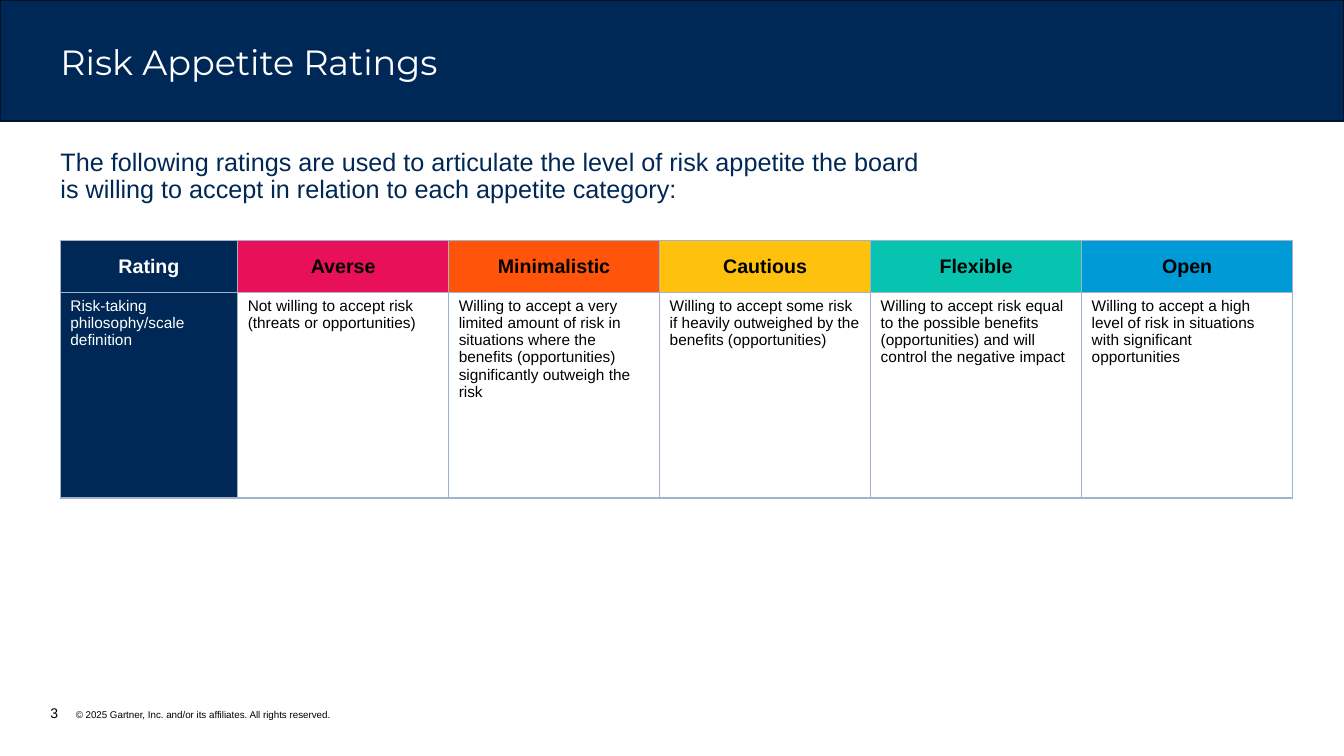
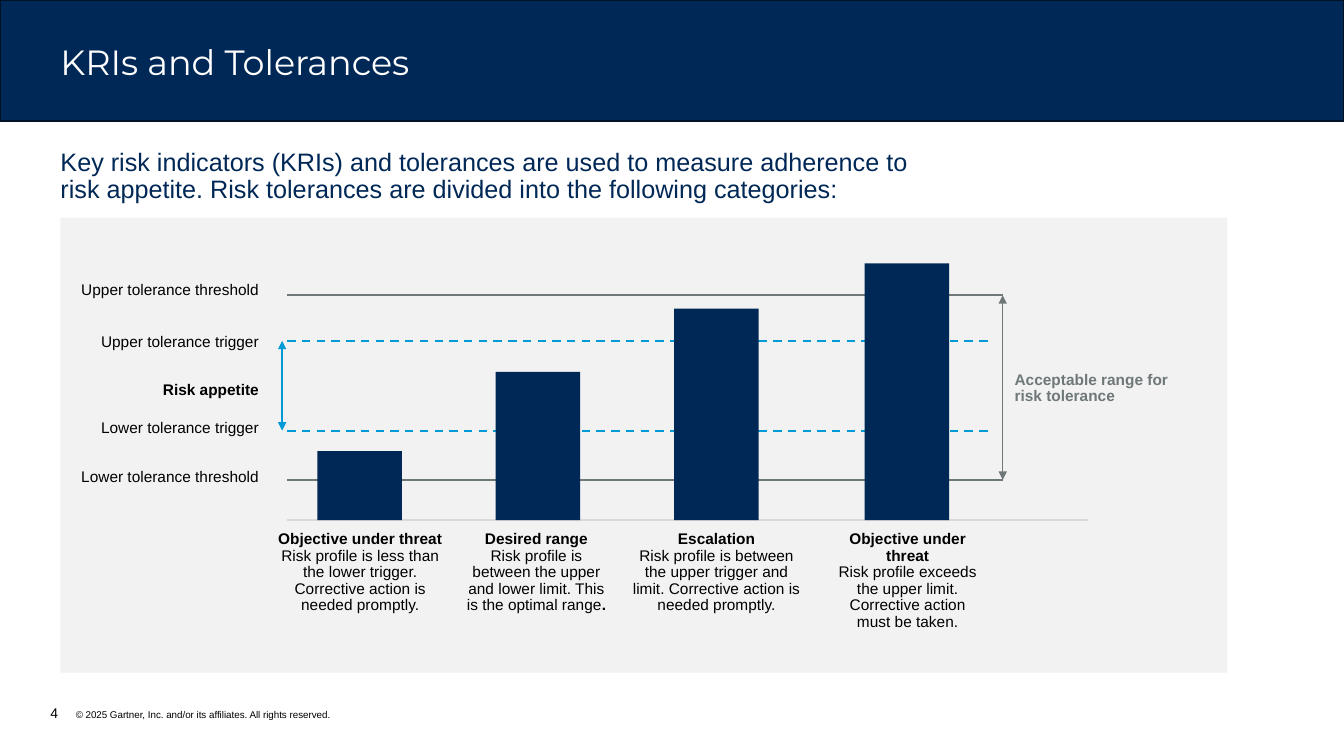
from dataclasses import dataclass

from pptx import Presentation
from pptx.dml.color import RGBColor
from pptx.enum.dml import MSO_LINE
from pptx.enum.shapes import MSO_CONNECTOR, MSO_SHAPE
from pptx.enum.text import MSO_ANCHOR as Anchor, MSO_AUTO_SIZE, PP_ALIGN as Align
from pptx.oxml.ns import qn
from pptx.oxml.xmlchemy import OxmlElement
from pptx.util import Cm, Pt

# Shared look
NAVY = RGBColor(0x00, 0x28, 0x56)
BAND_EDGE = RGBColor(0x00, 0x12, 0x26)
WHITE = RGBColor(0xFF, 0xFF, 0xFF)
BLACK = RGBColor(0x00, 0x00, 0x00)
PANEL_GREY = RGBColor(0xF2, 0xF2, 0xF2)
AXIS_GREY = RGBColor(0xD9, 0xD9, 0xD9)
SLATE = RGBColor(0x6F, 0x78, 0x78)
BLUE = RGBColor(0x00, 0x9A, 0xD7)
GRID = RGBColor(0xA1, 0xB3, 0xCA)
CRIMSON = RGBColor(0xE8, 0x11, 0x59)
ORANGE = RGBColor(0xFF, 0x54, 0x0A)
AMBER = RGBColor(0xFE, 0xC1, 0x0D)
TEAL = RGBColor(0x06, 0xC4, 0xB0)
BODY_FONT, TITLE_FONT = "Arial", "Montserrat"
COPYRIGHT = "© 2025 Gartner, Inc. and/or its affiliates. All rights reserved."
SLIDE_WIDTH, SLIDE_HEIGHT = 33.87, 19.05
FIRST_NUMBER = 3

# Column heading, colour and definition
RATINGS = [
    ("Averse", CRIMSON, "Not willing to accept risk (threats or opportunities)"),
    ("Minimalistic", ORANGE, "Willing to accept a very limited amount of risk in situations "
     "where the benefits (opportunities) significantly outweigh the risk"),
    ("Cautious", AMBER, "Willing to accept some risk if heavily outweighed by the "
     "benefits (opportunities)"),
    ("Flexible", TEAL, "Willing to accept risk equal to the possible benefits "
     "(opportunities) and will control the negative impact"),
    ("Open", BLUE, "Willing to accept a high level of risk in situations with "
     "significant opportunities"),
]

# Heights inside the diagram panel, in cm
UPPER_THRESHOLD, UPPER_TRIGGER = 1.95, 3.1
LOWER_TRIGGER, LOWER_THRESHOLD, BASELINE = 5.36, 6.6, 7.62

# Label, middle of the label, bold
LEVEL_LABELS = [
    ("Upper tolerance threshold", 1.84, False),
    ("Upper tolerance trigger", 3.13, False),
    ("Risk appetite", 4.35, True),
    ("Lower tolerance trigger", 5.32, False),
    ("Lower tolerance threshold", 6.54, False),
]

# Bar left, bar top, caption left, caption width, heading, caption runs
BARS = [
    (6.48, 5.88, 5.11, 4.9, "Objective under threat",
     [("Risk profile is less than the lower trigger. Corrective action is "
       "needed promptly.", {})]),
    (10.97, 3.88, 9.94, 4.12, "Desired range",
     [("Risk profile is between the upper and lower limit. This is the optimal range", {}),
      (".", {"bold": True})]),
    (15.47, 2.29, 14.05, 4.98, "Escalation",
     [("Risk profile is between the upper trigger and limit. Corrective action is "
       "needed promptly.", {})]),
    (20.27, 1.15, 19.22, 4.27, "Objective under threat",
     [("Risk profile exceeds the upper limit. Corrective action must be taken.", {})]),
]


@dataclass
class Box:
    """An area in centimetres."""
    left: float
    top: float
    width: float
    height: float

    def inner(self, left, top, width, height):
        return Box(self.left + left, self.top + top, width, height)

    def lengths(self):
        return Cm(self.left), Cm(self.top), Cm(self.width), Cm(self.height)


def write(frame, *paragraphs, size=11, color=BLACK, font=BODY_FONT, bold=False,
          align=Align.LEFT, spacing=0.9, hanging=0):
    """Fill a text frame; a paragraph is a string or a list of (text, format)."""
    for index, content in enumerate(paragraphs):
        paragraph = frame.paragraphs[0] if index == 0 else frame.add_paragraph()
        properties = paragraph._p.get_or_add_pPr()
        properties.set("marL", str(Cm(hanging)))
        properties.set("indent", str(-Cm(hanging)))
        properties.append(OxmlElement("a:buNone"))
        paragraph.alignment = align
        paragraph.line_spacing = spacing
        paragraph.space_before = Pt(0)
        for text, changes in [(content, {})] if isinstance(content, str) else content:
            run = paragraph.add_run()
            run.text = text
            run.font.name = font
            run.font.size = Pt(changes.get("size", size))
            run.font.bold = changes.get("bold", bold)
            run.font.color.rgb = color


def set_frame(shape, box, anchor=Anchor.TOP):
    """Place a text shape and fix its wrapping and anchor."""
    shape.left, shape.top, shape.width, shape.height = box.lengths()
    frame = shape.text_frame
    frame.word_wrap = True
    frame.auto_size = MSO_AUTO_SIZE.NONE
    frame.vertical_anchor = anchor
    return frame


def add_text(slide, box, *paragraphs, anchor=Anchor.TOP, **text_format):
    frame = set_frame(slide.shapes.add_textbox(*box.lengths()), box, anchor)
    write(frame, *paragraphs, **text_format)
    return frame


def add_rectangle(slide, box, fill, edge=None):
    shape = slide.shapes.add_shape(MSO_SHAPE.RECTANGLE, *box.lengths())
    shape.shadow.inherit = False
    shape.fill.solid()
    shape.fill.fore_color.rgb = fill
    if edge is None:
        shape.line.fill.background()
    else:
        shape.line.color.rgb = edge
        shape.line.width = Pt(2)
    return shape


def add_line(slide, box, start, end, color, width=1.5, dashed=False, arrows=False):
    """Draw a line between two points given inside the box."""
    points = [Cm(value) for x, y in (start, end) for value in (box.left + x, box.top + y)]
    connector = slide.shapes.add_connector(MSO_CONNECTOR.STRAIGHT, *points)
    connector._element.spPr.append(OxmlElement("a:effectLst"))
    connector.line.color.rgb = color
    connector.line.width = Pt(width)
    if dashed:
        connector.line.dash_style = MSO_LINE.DASH
    if arrows:
        for tag in ("a:headEnd", "a:tailEnd"):
            arrowhead = OxmlElement(tag)
            arrowhead.set("type", "triangle")
            connector.line._get_or_add_ln().append(arrowhead)


def add_base_slide(presentation, title, intro):
    """Slide with title band, introduction and footer."""
    slide = presentation.slides.add_slide(presentation.slide_layouts[1])
    band = add_rectangle(slide, Box(0, 0, SLIDE_WIDTH, 3.05), NAVY, BAND_EDGE)
    slide.shapes.title._element.addprevious(band._element)
    write(set_frame(slide.shapes.title, Box(1.27, 1.02, 31.32, 1.24)), title,
          size=25, color=WHITE, font=TITLE_FONT)
    write(set_frame(slide.placeholders[1], Box(1.27, 3.65, 22.53, 1.24)), intro,
          size=18, color=NAVY)
    number = FIRST_NUMBER + len(presentation.slides) - 1
    footer = add_text(slide, Box(1.27, 17.75, 20.3, 0.43),
                      [(str(number), {}), ("\t" + COPYRIGHT, {"size": 7})],
                      size=10, spacing=1, hanging=0.64, anchor=Anchor.BOTTOM)
    footer.margin_left = footer.margin_right = footer.margin_top = footer.margin_bottom = 0
    return slide


def format_cell(cell, text, fill, **text_format):
    properties = cell._tc.get_or_add_tcPr()
    for side in "LRTB":
        border = OxmlElement(f"a:ln{side}")
        border.set("w", str(Pt(1)))
        solid = OxmlElement("a:solidFill")
        color = OxmlElement("a:srgbClr")
        color.set("val", str(GRID))
        solid.append(color)
        border.append(solid)
        properties.append(border)
    cell.fill.solid()
    cell.fill.fore_color.rgb = fill
    write(cell.text_frame, text, spacing=1, **text_format)


def add_ratings_table(slide, box):
    label_width, header_height = 4.47, 1.3
    table = slide.shapes.add_table(2, len(RATINGS) + 1, *box.lengths()).table
    table.horz_banding = False
    table.rows[0].height = Cm(header_height)
    table.rows[1].height = Cm(box.height - header_height)
    columns = [("Rating", NAVY, "Risk-taking philosophy/scale definition")] + RATINGS
    for index, (heading, color, definition) in enumerate(columns):
        is_label = index == 0
        width = label_width if is_label else (box.width - label_width) / len(RATINGS)
        table.columns[index].width = Cm(width)
        text_color = WHITE if is_label else BLACK
        header = table.cell(0, index)
        header.vertical_anchor = Anchor.MIDDLE
        format_cell(header, heading, color, size=14, bold=True,
                    color=text_color, align=Align.CENTER)
        format_cell(table.cell(1, index), definition, NAVY if is_label else WHITE,
                    color=text_color)


def add_tolerance_diagram(slide, box):
    add_rectangle(slide, box, PANEL_GREY)
    line_left, threshold_right, trigger_right = 5.72, 23.75, 23.42
    # Axis, thresholds and triggers
    for height, right, color, dashed in [
            (BASELINE, 25.89, AXIS_GREY, False),
            (LOWER_THRESHOLD, threshold_right, SLATE, False),
            (LOWER_TRIGGER, trigger_right, BLUE, True),
            (UPPER_TRIGGER, trigger_right, BLUE, True),
            (UPPER_THRESHOLD, threshold_right, SLATE, False)]:
        add_line(slide, box, (line_left, height), (right, height), color, dashed=dashed)
    # Range arrows
    for x, top, bottom, color in [(5.59, UPPER_TRIGGER, LOWER_TRIGGER, BLUE),
                                  (threshold_right, UPPER_THRESHOLD, LOWER_THRESHOLD, SLATE)]:
        add_line(slide, box, (x, top), (x, bottom), color, width=1, arrows=True)
    add_text(slide, box.inner(23.8, 3.76, 4.72, 1.24),
             "Acceptable range for risk tolerance", color=SLATE, bold=True)
    # Level labels
    for label, middle, bold in LEVEL_LABELS:
        add_text(slide, box.inner(-0.3, middle - 0.45, 5.56, 0.9), label,
                 bold=bold, align=Align.RIGHT, anchor=Anchor.MIDDLE)
    # Bars with captions
    for left, top, caption_left, caption_width, heading, caption in BARS:
        add_rectangle(slide, box.inner(left, top, 2.13, BASELINE - top), NAVY)
        add_text(slide, box.inner(caption_left, 7.77, caption_width, 3.6),
                 [(heading, {"bold": True})], caption, align=Align.CENTER)


def main():
    presentation = Presentation()
    presentation.slide_width = Cm(SLIDE_WIDTH)
    presentation.slide_height = Cm(SLIDE_HEIGHT)

    ratings = add_base_slide(
        presentation, "Risk Appetite Ratings",
        "The following ratings are used to articulate the level of risk appetite the board "
        "is willing to accept in relation to each appetite category:")
    add_ratings_table(ratings, Box(1.52, 6.07, 31.06, 6.48))

    tolerances = add_base_slide(
        presentation, "KRIs and Tolerances",
        "Key risk indicators (KRIs) and tolerances are used to measure adherence to "
        "risk appetite. Risk tolerances are divided into the following categories:")
    add_tolerance_diagram(tolerances, Box(1.52, 5.49, 29.41, 11.46))

    presentation.save("out.pptx")


if __name__ == "__main__":
    main()
